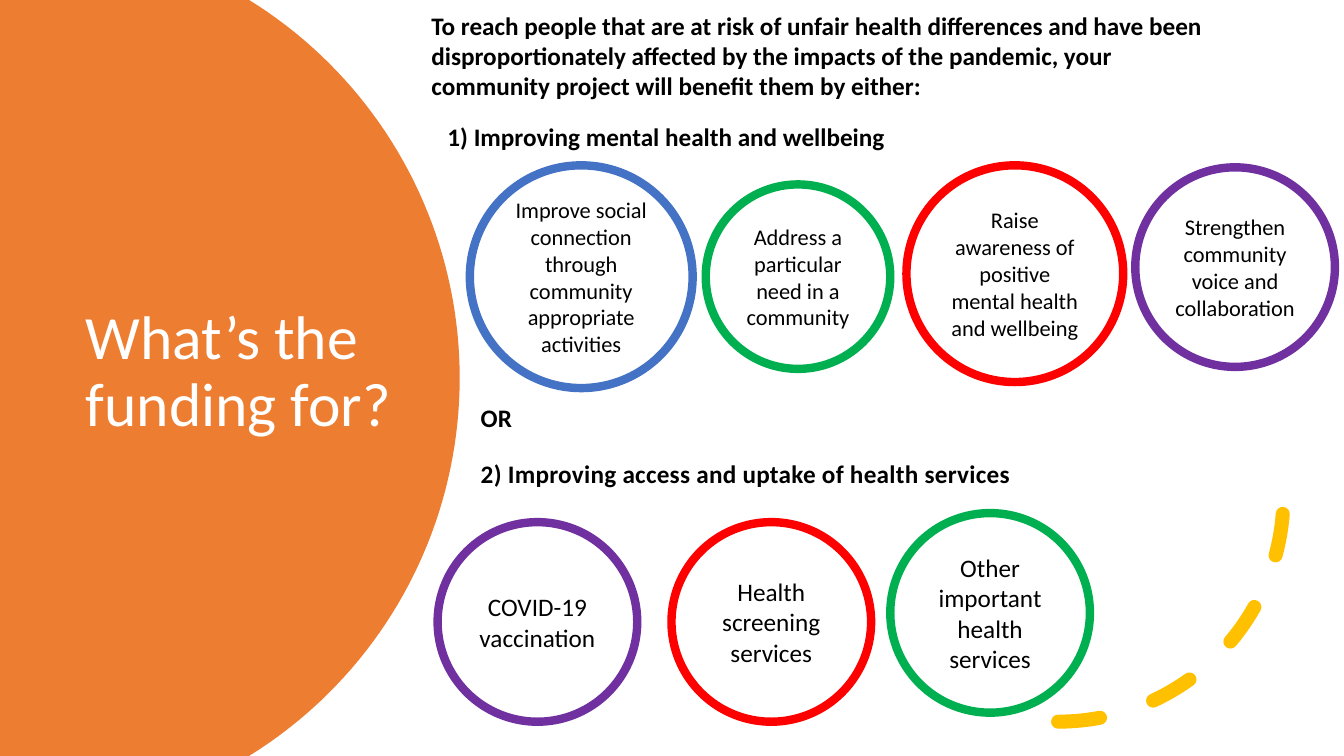
from math import asin, cos, sin

from pptx import Presentation
from pptx.dml.color import RGBColor
from pptx.enum.dml import MSO_LINE
from pptx.enum.shapes import MSO_SHAPE as Shape
from pptx.enum.text import MSO_ANCHOR as Anchor, MSO_AUTO_SIZE as AutoSize, PP_ALIGN as Align
from pptx.util import Inches, Pt

ORANGE = RGBColor(0xED, 0x7D, 0x31)
YELLOW = RGBColor(0xFF, 0xC0, 0x00)
RED = RGBColor(0xFF, 0x00, 0x00)
PURPLE = RGBColor(0x70, 0x30, 0xA0)
GREEN = RGBColor(0x00, 0xB0, 0x50)
BLUE = RGBColor(0x44, 0x72, 0xC4)
BLACK = RGBColor(0x00, 0x00, 0x00)
WHITE = RGBColor(0xFF, 0xFF, 0xFF)


def write(para, text, size=18, color=BLACK, bold=False, align=Align.LEFT, spacing=1.0, after=0):
    para.alignment = align
    para.line_spacing = spacing
    para.space_before = Pt(0)
    para.space_after = Pt(after)
    span = para.add_run()
    span.text = text
    span.font.name = "Calibri"
    span.font.size = Pt(size)
    span.font.bold = bold
    span.font.color.rgb = color
    return span


deck = Presentation()
deck.slide_width = Inches(13.33)
deck.slide_height = Inches(7.5)
page = deck.slides.add_slide(deck.slide_layouts[5])

title = page.shapes.title
title.left, title.top = Inches(0.75), Inches(1.26)
title.width, title.height = Inches(3.5), Inches(4.88)
title.text_frame.word_wrap = True
title.text_frame.auto_size = AutoSize.NONE
title.text_frame.vertical_anchor = Anchor.MIDDLE
write(title.text_frame.paragraphs[0], "What’s the funding for?", size=44, color=WHITE, spacing=0.9)

center_x, center_y, radius = 0.15, 3.75, 4.41
half_angle = asin(center_y / radius)
steps = 80
angles = [half_angle * (2 * step / steps - 1) for step in range(steps + 1)]
rim = [
    (Inches(center_x + radius * cos(angle)), Inches(center_y + radius * sin(angle)))
    for angle in angles
]
outline = page.shapes.build_freeform(0, 0)
outline.add_line_segments(rim + [(0, Inches(7.5))], close=True)
panel = outline.convert_to_shape()
panel.shadow.inherit = False
panel.fill.solid()
panel.fill.fore_color.rgb = ORANGE
panel.line.fill.background()
title.element.addprevious(panel.element)

arc = page.shapes.add_shape(Shape.ARC, Inches(8.26), Inches(2.69), Inches(4.47), Inches(4.47))
arc.shadow.inherit = False
arc.fill.background()
arc.line.color.rgb = YELLOW
arc.line.width = Pt(10)
arc.line.dash_style = MSO_LINE.DASH
arc.line.fill
arc.element.spPr.find("{*}ln").set("cap", "rnd")
arc.element.spPr.find("{*}xfrm").set("flipV", "1")

circles = [
    (6.66, 5.18, 1.98, RED, 18, "Health screening services"),
    (4.34, 5.18, 1.98, PURPLE, 18, "COVID-19 vaccination"),
    (8.83, 5.09, 1.98, GREEN, 18, "Other important health services"),
    (4.66, 1.64, 2.21, BLUE, 16,
     "Improve social connection through community appropriate activities"),
    (7.0, 1.83, 1.83, GREEN, 16, "Address a particular need in a community"),
    (11.26, 1.66, 1.98, PURPLE, 16, "Strengthen community voice and collaboration"),
    (8.99, 1.64, 2.15, RED, 16, "Raise awareness of positive mental health and wellbeing"),
]
for left, top, diameter, color, size, text in circles:
    circle = page.shapes.add_shape(
        Shape.OVAL, Inches(left), Inches(top), Inches(diameter), Inches(diameter)
    )
    circle.shadow.inherit = False
    circle.fill.background()
    circle.line.color.rgb = color
    circle.line.width = Pt(6)
    circle.text_frame.word_wrap = True
    circle.text_frame.vertical_anchor = Anchor.MIDDLE
    write(circle.text_frame.paragraphs[0], text, size=size, align=Align.CENTER)

headings = [
    (4.67, 3.79, 6.67, 1.07, 1.5, 8, ["OR", "2) Improving access and uptake of health services"]),
    (4.34, 1.15, 5.93, 0.4, 1.0, 0, ["1) Improving mental health and wellbeing"]),
    (4.18, 0.05, 7.92, 1.01, 1.0, 0, [
        "To reach people that are at risk of unfair health differences and have been "
        "disproportionately affected by the impacts of the pandemic, your community "
        "project will benefit them by either:"
    ]),
]
for left, top, width, height, spacing, after, lines in headings:
    box = page.shapes.add_textbox(Inches(left), Inches(top), Inches(width), Inches(height))
    frame = box.text_frame
    frame.word_wrap = True
    frame.auto_size = AutoSize.SHAPE_TO_FIT_TEXT
    for index, line in enumerate(lines):
        para = frame.add_paragraph() if index else frame.paragraphs[0]
        last = index == len(lines) - 1
        span = write(para, line, bold=True, spacing=spacing, after=0 if last else after)
        if index:
            span.font._element.set("spc", "20")

deck.save("out.pptx")
